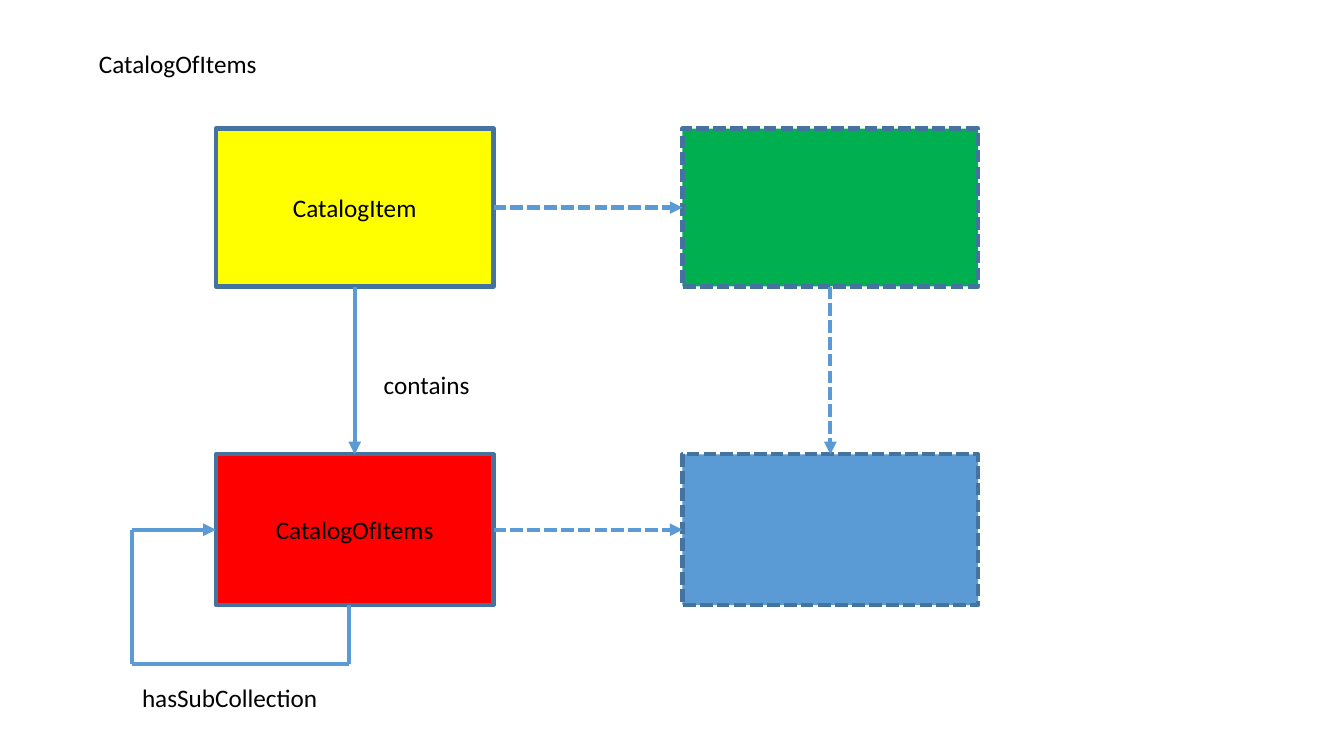
from dataclasses import dataclass

from lxml.etree import SubElement
from pptx import Presentation
from pptx.dml.color import RGBColor
from pptx.enum.dml import MSO_LINE
from pptx.enum.shapes import MSO_CONNECTOR, MSO_SHAPE
from pptx.enum.text import MSO_ANCHOR, PP_ALIGN
from pptx.oxml.ns import qn
from pptx.util import Cm, Pt


@dataclass(frozen=True)
class Theme:
    font: str = "Calibri"
    text_size: int = 18
    line_width: int = 3
    text: str = "000000"
    border: str = "43739E"
    arrow: str = "5B9BD5"
    item: str = "FFFF00"
    catalog: str = "FF0000"
    item_peer: str = "00B050"
    catalog_peer: str = "5B9BD5"


THEME = Theme()
TOP, LEFT, BOTTOM, RIGHT = range(4)

HEADING = ("CatalogOfItems", 2.24, 1.09, 4.52)
LABELS = [
    ("contains", 9.42, 9.17, 2.69),
    ("hasSubCollection", 3.33, 17.07, 4.98),
]
LABEL_HEIGHT = 1.02
COLUMNS = [(5.44, 7.0), (17.2, 7.45)]
ROWS = [(3.24, 3.98), (11.45, 3.8)]
BOXES = {
    "item": ("CatalogItem", 0, 0, False),
    "catalog": ("CatalogOfItems", 0, 1, False),
    "catalog_peer": ("", 1, 1, True),
    "item_peer": ("", 1, 0, True),
}
RELATIONS = [
    ("item", BOTTOM, "catalog", TOP, False),
    ("catalog", RIGHT, "catalog_peer", LEFT, True),
    ("item_peer", BOTTOM, "catalog_peer", TOP, True),
    ("item", RIGHT, "item_peer", LEFT, True),
]
LOOP_START_X, LOOP_LEFT, LOOP_BOTTOM = 8.8, 3.33, 16.73


def apply(target, formats):
    for attribute, value in formats.items():
        setattr(target, attribute, value)


def write(frame, wording, align, anchor, wrap):
    apply(frame, {"text": wording, "vertical_anchor": anchor, "word_wrap": wrap})
    paragraph = frame.paragraphs[0]
    paragraph.alignment = align
    font = paragraph.runs[0].font
    apply(font, {"name": THEME.font, "size": Pt(THEME.text_size), "bold": False})
    font.color.rgb = RGBColor.from_string(THEME.text)


def style_line(line, color, dashed):
    line.color.rgb = RGBColor.from_string(color)
    line.width = Pt(THEME.line_width)
    if dashed:
        line.dash_style = MSO_LINE.SQUARE_DOT


def add_box(slide, role):
    wording, column, row, dashed = BOXES[role]
    (left, width), (top, height) = COLUMNS[column], ROWS[row]
    box = slide.shapes.add_shape(
        MSO_SHAPE.RECTANGLE, Cm(left), Cm(top), Cm(width), Cm(height))
    box.shadow.inherit = False
    box.fill.solid()
    box.fill.fore_color.rgb = RGBColor.from_string(getattr(THEME, role))
    style_line(box.line, THEME.border, dashed)
    if wording:
        write(box.text_frame, wording, PP_ALIGN.CENTER, MSO_ANCHOR.MIDDLE, True)
    return box


def add_link(slide, start=(0, 0), end=(0, 0), source=None, target=None,
             dashed=False, arrow=False):
    link = slide.shapes.add_connector(MSO_CONNECTOR.STRAIGHT, *start, *end)
    if source:
        link.begin_connect(*source)
    if target:
        link.end_connect(*target)
    style_line(link.line, THEME.arrow, dashed)
    if arrow:
        SubElement(link.line._get_or_add_ln(), qn("a:tailEnd"), type="triangle")
    SubElement(link._element.spPr, qn("a:effectLst"))


def add_loop(slide, catalog):
    middle = catalog.top + catalog.height // 2
    corners = [
        (Cm(LOOP_START_X), catalog.top + catalog.height),
        (Cm(LOOP_START_X), Cm(LOOP_BOTTOM)),
        (Cm(LOOP_LEFT), Cm(LOOP_BOTTOM)),
        (Cm(LOOP_LEFT), middle),
    ]
    for start, end in zip(corners, corners[1:]):
        add_link(slide, start, end)
    add_link(slide, corners[-1], (catalog.left, middle),
             target=(catalog, LEFT), arrow=True)


def main():
    deck = Presentation()
    apply(deck, {"slide_width": Cm(33.87), "slide_height": Cm(19.05)})
    slide = deck.slides.add_slide(deck.slide_layouts[5])

    wording, left, top, width = HEADING
    heading = slide.shapes.title
    apply(heading, {"left": Cm(left), "top": Cm(top),
                    "width": Cm(width), "height": Cm(LABEL_HEIGHT)})
    write(heading.text_frame, wording, PP_ALIGN.LEFT, MSO_ANCHOR.TOP, False)

    boxes = {role: add_box(slide, role) for role in BOXES}
    for source, source_side, target, target_side, dashed in RELATIONS:
        add_link(slide, source=(boxes[source], source_side),
                 target=(boxes[target], target_side), dashed=dashed, arrow=True)
    add_loop(slide, boxes["catalog"])

    for wording, left, top, width in LABELS:
        label = slide.shapes.add_textbox(
            Cm(left), Cm(top), Cm(width), Cm(LABEL_HEIGHT))
        write(label.text_frame, wording, PP_ALIGN.LEFT, MSO_ANCHOR.TOP, False)

    deck.save("out.pptx")


if __name__ == "__main__":
    main()
